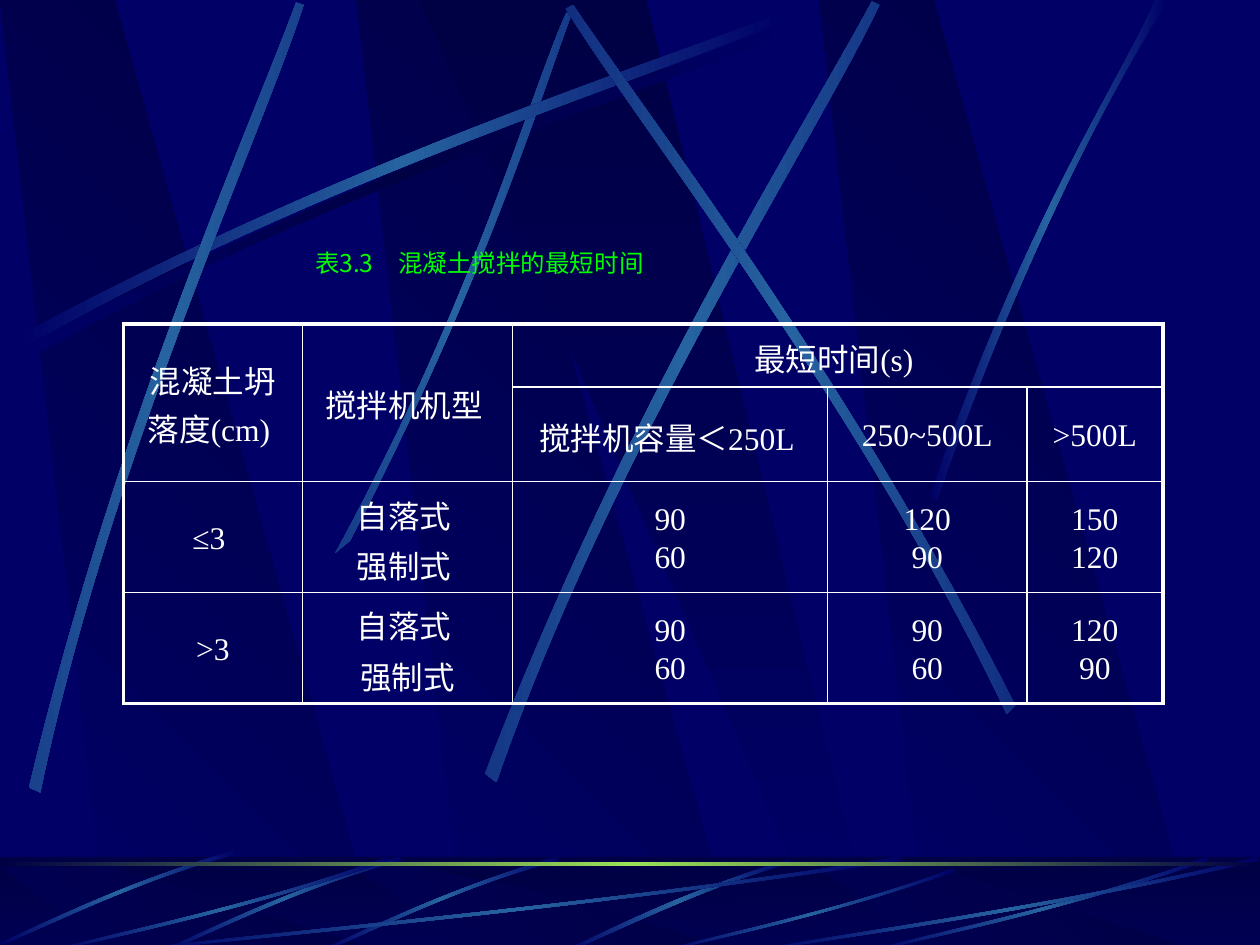
from math import cos, radians, sin

from pptx import Presentation
from pptx.dml.color import RGBColor
from pptx.enum.shapes import MSO_SHAPE
from pptx.enum.text import MSO_ANCHOR, MSO_AUTO_SIZE, PP_ALIGN
from pptx.oxml import parse_xml
from pptx.oxml.ns import nsdecls
from pptx.util import Pt

RECTANGLE = MSO_SHAPE.RECTANGLE
TOP, MIDDLE = MSO_ANCHOR.TOP, MSO_ANCHOR.MIDDLE
LEFT, CENTER = PP_ALIGN.LEFT, PP_ALIGN.CENTER
NO_AUTO_SIZE = MSO_AUTO_SIZE.NONE

NAVY = RGBColor(0x00, 0x00, 0x66)
MIDNIGHT = RGBColor(0x00, 0x00, 0x44)
STEEL = RGBColor(0x26, 0x63, 0xA0)
LIME = RGBColor(0x9C, 0xE1, 0x57)
GREEN = RGBColor(0x00, 0xFF, 0x00)
WHITE = RGBColor(0xFF, 0xFF, 0xFF)
GLOW = (NAVY, STEEL, NAVY)
SHADE = (NAVY, MIDNIGHT, NAVY)

CJK_FONT = "Noto Sans CJK SC"
LATIN_FONT = "Times New Roman"
SCALE = 9144

BEAM = [(86, 1), (302, 1), (91, 0), (0, 0)]
BEAM_LEFTS = (283, 0, 650)
WEDGE = [(333, 0), (658, 1), (694, 1), (513, 0)]

WALL_STRIPES = [
    (0, SHADE, [(20, 275), (284, 134), (524, 59), (626, 18), (629, 24), (528, 69), (254, 151), (23, 285)]),
    (45, GLOW, [(278, 429), (391, 209), (430, 73), (456, 5), (449, 11), (417, 84), (377, 236), (266, 439)]),
    (0, GLOW, [(14, 267), (278, 125), (518, 51), (620, 10), (623, 16), (522, 61), (248, 143), (17, 277)]),
    (311.7, GLOW, [(23, 625), (93, 334), (197, 105), (235, 2), (241, 4), (207, 109), (86, 368), (32, 629)]),
    (321.6, GLOW, [(385, 614), (498, 320), (638, 102), (692, 1), (698, 4), (649, 108), (486, 355), (394, 621)]),
    (34.7, GLOW, [(806, 560), (670, 293), (516, 95), (455, 4), (449, 7), (507, 101), (685, 325), (799, 567)]),
    (0, GLOW, [(738, 394), (814, 173), (888, 66), (917, 0), (927, 0), (836, 145), (769, 322), (744, 397)]),
]
FLOOR_STRIPE = [(627, 2), (537, 29), (477, 62), (448, 74), (453, 75), (490, 58), (571, 20), (628, 5)]
SPRAY = [(442, 0), (355, 25), (287, 60), (256, 73), (257, 75), (288, 63), (365, 23), (444, 3)]
SPRAY_SHIFTS = [(0, 0), (-125, 0), (-256, -5)]
SWEEP = [(617, 3), (349, 43), (106, 64), (3, 75), (0, 74), (102, 61), (380, 38), (614, 0)]
SWEEP_BOXES = [(100, 0, 617, 75), (42, 0, 267, 75), (527, 9, 231, 66), (692, 0, 267, 75), (600, 0, 400, 75)]

COLUMN_WIDTHS = (142, 167, 250, 158, 108)
ROW_HEIGHTS = (50, 75, 88, 88)
MERGES = [((0, 0), (1, 0)), ((0, 1), (1, 1)), ((0, 2), (0, 4))]
CELL_TEXTS = [
    ["混凝土坍落度(cm) ", "搅拌机机型 ", "最短时间(s) ", "", ""],
    ["", "", "搅拌机容量＜250L ", "250~500L", ">500L"],
    ["≤3 ", "自落式 \n强制式 ", "90\n60", "120\n90", "150\n120"],
    [">3", "自落式 \n强制式", "90\n60", "90\n60", "120\n90"],
]


def px(*lengths):
    """Convert px lengths to EMU."""
    return [round(length * SCALE) for length in lengths]


def turn(point, degrees):
    """Turn a point clockwise about the origin."""
    x, y = point
    angle = radians(degrees)
    return x * cos(angle) - y * sin(angle), x * sin(angle) + y * cos(angle)


def paint(shape, colors, angle=0):
    """Give a shape an evenly spaced linear gradient without line or shadow."""
    shape.shadow.inherit = False
    shape.line.fill.background()
    shape.fill.background()
    stops = "".join(
        f'<a:gs pos="{round(100000 * i / (len(colors) - 1))}"><a:srgbClr val="{color}"/></a:gs>'
        for i, color in enumerate(colors))
    gradient = parse_xml(
        f'<a:gradFill {nsdecls("a")} rotWithShape="0"><a:gsLst>{stops}</a:gsLst>'
        f'<a:lin ang="{angle * 60000}" scaled="0"/></a:gradFill>')
    properties = shape._element.spPr
    properties.replace(properties.find("{*}noFill"), gradient)


def add_outline(shapes, points):
    """Add a closed polygon through px points."""
    start, *others = [px(*point) for point in points]
    builder = shapes.build_freeform(*start)
    builder.add_line_segments(others, close=True)
    return builder.convert_to_shape()


def bend(shape):
    """Turn the two long sides of an eight-point outline into cubic curves."""
    lines = list(shape._element.spPr.iter("{*}lnTo"))
    for side in (lines[:3], lines[4:7]):
        curve = parse_xml(f'<a:cubicBezTo {nsdecls("a")}/>')
        side[0].addprevious(curve)
        for line in side:
            curve.append(line[0])
            line.getparent().remove(line)


def add_stripe(shapes, box, points, rotation=0, colors=GLOW):
    """Add a curved stripe whose own frame is rotated."""
    left, top = box[:2]
    outline = [turn((left + x, top + y), -rotation) for x, y in points]
    center = [(min(values) + max(values)) / 2 for values in zip(*outline)]
    target = turn(center, rotation)
    dx, dy = target[0] - center[0], target[1] - center[1]
    shape = add_outline(shapes, [(x + dx, y + dy) for x, y in outline])
    bend(shape)
    shape.rotation = rotation
    paint(shape, colors)


def add_beams(shapes, box):
    """Fill a box with slanted dark beams."""
    left, top, _, height = box
    for offset in BEAM_LEFTS:
        points = [(left + offset + x, top + y * height) for x, y in BEAM]
        paint(add_outline(shapes, points), (NAVY, MIDNIGHT), 315)
    points = [(left + x, top + y * height) for x, y in WEDGE]
    paint(add_outline(shapes, points), (MIDNIGHT, NAVY), 90)


def add_wall(shapes, box):
    """Draw the beams and the long stripes."""
    add_beams(shapes, box)
    for rotation, colors, points in WALL_STRIPES:
        add_stripe(shapes, box, points, rotation, colors)


def add_floor(shapes, box):
    """Draw the band at the bottom with its stripes and lime line."""
    left, top, width, height = box
    paint(shapes.add_shape(RECTANGLE, *px(*box)), (MIDNIGHT, NAVY), 90)
    add_beams(shapes, (left, top + 8, width, height - 8))
    veil = shapes.add_shape(RECTANGLE, *px(*box))
    veil.shadow.inherit = False
    veil.line.fill.background()
    veil.fill.solid()
    veil.fill.fore_color.rgb = MIDNIGHT
    color = veil._element.spPr.find("{*}solidFill")[0]
    color.append(parse_xml(f'<a:alpha {nsdecls("a")} val="50000"/>'))
    add_stripe(shapes, box, FLOOR_STRIPE)
    for dx, dy in SPRAY_SHIFTS:
        add_stripe(shapes, box, [(x + dx, y + dy) for x, y in SPRAY], 315)
    for x0, y0, w, h in SWEEP_BOXES:
        add_stripe(shapes, box, [(x0 + x * w / 617, y0 + y * h / 75) for x, y in SWEEP])
    line = shapes.add_shape(RECTANGLE, *px(left, top + 4, width, 3))
    paint(line, (MIDNIGHT, LIME, MIDNIGHT))


def format_run(run, size, color, latin):
    """Set size, colour and fonts of a run."""
    run.font.size = Pt(size)
    run.font.color.rgb = color
    run.font.name = latin
    run._r.get_or_add_rPr().append(parse_xml(f'<a:ea {nsdecls("a")} typeface="{CJK_FONT}"/>'))


def add_caption(title, box):
    """Place the table caption in the title placeholder."""
    title.left, title.top, title.width, title.height = px(*box)
    frame = title.text_frame
    frame.text = "表3.3　混凝土搅拌的最短时间"
    frame.auto_size = NO_AUTO_SIZE
    frame.vertical_anchor = TOP
    frame.margin_top = px(27)[0]
    frame.margin_bottom = 0
    paragraph = frame.paragraphs[0]
    paragraph.alignment = LEFT
    format_run(paragraph.runs[0], 14, GREEN, CJK_FONT)


def add_borders(cell, outer):
    """Draw the four cell borders, thicker on the outer edges."""
    properties = cell._tc.get_or_add_tcPr()
    for index, side in enumerate("LRTB"):
        width = Pt(2.25 if side in outer else 1)
        properties.insert(index, parse_xml(
            f'<a:ln{side} {nsdecls("a")} w="{width}"><a:solidFill>'
            f'<a:srgbClr val="{WHITE}"/></a:solidFill></a:ln{side}>'))


def add_time_table(shapes, box):
    """Add the table of shortest mixing times."""
    rows, columns = len(ROW_HEIGHTS), len(COLUMN_WIDTHS)
    table = shapes.add_table(rows, columns, *px(*box)).table
    table.first_row = table.horz_banding = False
    for column, width in zip(table.columns, px(*COLUMN_WIDTHS)):
        column.width = width
    for row, height in zip(table.rows, px(*ROW_HEIGHTS)):
        row.height = height
    for first, last in MERGES:
        table.cell(*first).merge(table.cell(*last))
    for r, texts in enumerate(CELL_TEXTS):
        for c, text in enumerate(texts):
            cell = table.cell(r, c)
            cell.fill.background()
            if cell.is_spanned:
                continue
            right = c + (cell.span_width if cell.is_merge_origin else 1)
            bottom = r + (cell.span_height if cell.is_merge_origin else 1)
            edges = {"L": c == 0, "R": right == columns, "T": r == 0, "B": bottom == rows}
            add_borders(cell, [side for side, is_outer in edges.items() if is_outer])
            is_tall = bottom - r > 1
            cell.margin_top = cell.margin_bottom = px(0 if is_tall else 4)[0]
            cell.vertical_anchor = MIDDLE
            cell.text_frame.text = text
            for paragraph in cell.text_frame.paragraphs:
                paragraph.alignment = CENTER
                paragraph.line_spacing = 1.04 if is_tall else 1.1
                format_run(paragraph.runs[0], 18, WHITE, LATIN_FONT)


def main():
    """Build and save the slide."""
    presentation = Presentation()
    presentation.slide_width, presentation.slide_height = px(1000, 750)
    master = presentation.slide_master
    master.background.fill.solid()
    master.background.fill.fore_color.rgb = NAVY
    slide = presentation.slides.add_slide(presentation.slide_layouts[5])
    title = slide.shapes.title
    add_wall(slide.shapes, (0, 0, 1000, 752))
    add_floor(slide.shapes, (0, 680, 1000, 75))
    for index, shape in enumerate(list(slide.shapes)[1:]):
        master.shapes._spTree.insert(index + 2, shape._element)
    add_caption(title, (240, 170, 524, 50))
    add_time_table(slide.shapes, (98, 257, sum(COLUMN_WIDTHS), sum(ROW_HEIGHTS)))
    presentation.save("out.pptx")


if __name__ == "__main__":
    main()
